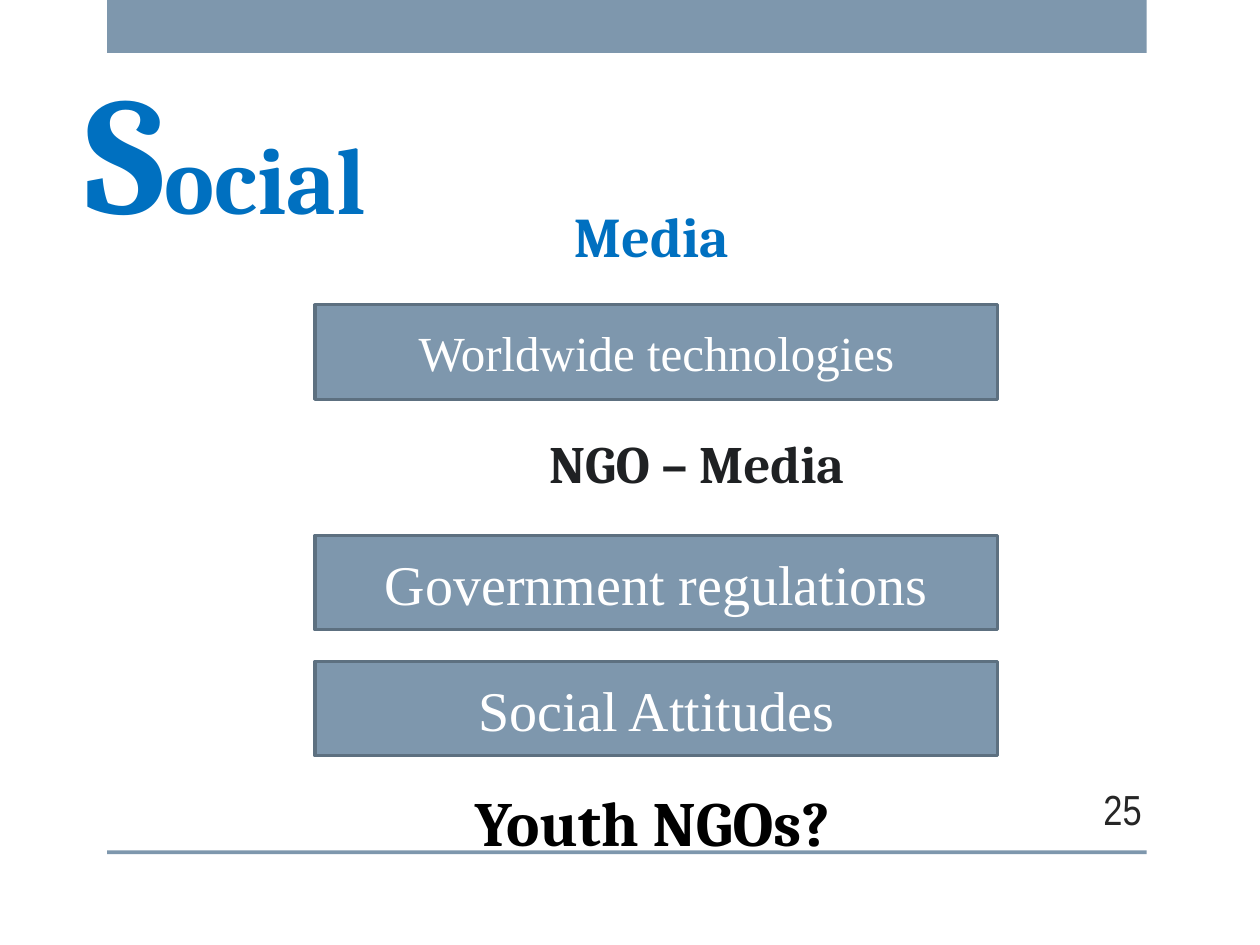
import pptx
import pptx.util
import pptx.dml.color
import pptx.enum.shapes
import pptx.enum.text

Inches = pptx.util.Inches
Align = pptx.enum.text.PP_ALIGN
Anchor = pptx.enum.text.MSO_ANCHOR

SLATE, SLATE_DARK, BLUE = "7E97AD", "5D7080", "0070C0"


def color(hex_text):
    return pptx.dml.color.RGBColor.from_string(hex_text)


def write_text(shape, text, *, size, font="Cambria", fill="000000", bold=False,
               align=Align.LEFT, anchor=Anchor.MIDDLE, first_size=None):
    """Write one line; first_size enlarges its first letter."""
    frame = shape.text_frame
    frame.word_wrap = True
    frame.vertical_anchor = anchor
    para = frame.paragraphs[0]
    para.alignment = align
    parts = [(text[:1], first_size), (text[1:], size)] if first_size else [(text, size)]
    for part, points in parts:
        span = para.add_run()
        span.text = part
        span.font.size = pptx.util.Pt(points)
        span.font.name = font
        span.font.bold = bold
        span.font.color.rgb = color(fill)


def add_label(page, box, text, **style):
    write_text(page.shapes.add_textbox(*map(Inches, box)), text, **style)


def add_bar(page, box, line=None):
    bar = page.shapes.add_shape(
        pptx.enum.shapes.MSO_SHAPE.RECTANGLE, *map(Inches, box))
    bar.shadow.inherit = False
    bar.fill.solid()
    bar.fill.fore_color.rgb = color(SLATE)
    if line:
        bar.line.color.rgb = color(line)
        bar.line.width = pptx.util.Pt(1.75)
    else:
        bar.line.fill.background()
    return bar


def add_frame(page, left, width):
    # Band at the top and rule at the bottom
    for top, height in ((0, 0.42), (6.75, 0.03)):
        add_bar(page, (left, top, width, height))


def add_headings(page):
    add_label(page, (0.58, 0.97, 5.33, 0.4), "Social", size=54, first_size=96,
              fill=BLUE, bold=True)
    add_label(page, (0.67, 1.51, 9, 0.67), "Media", size=32, fill=BLUE, bold=True,
              align=Align.CENTER, anchor=Anchor.BOTTOM)
    add_label(page, (4.03, 3.37, 3, 0.6), "NGO – Media", size=30, fill="1F2123",
              bold=True, align=Align.CENTER)
    add_label(page, (3.67, 6.17, 3.24, 0.71), "Youth NGOs?", size=36, bold=True,
              anchor=Anchor.TOP)


def add_factors(page, left, width, height):
    # Outlined bars: top, text, size
    for top, text, size in ((2.42, "Worldwide technologies", 28),
                            (4.25, "Government regulations", 32),
                            (5.25, "Social Attitudes", 32)):
        bar = add_bar(page, (left, top, width, height), line=SLATE_DARK)
        write_text(bar, text, size=size, font="Times New Roman", fill="FFFFFF",
                   align=Align.CENTER)


def main():
    deck = pptx.Presentation()
    deck.slide_width, deck.slide_height = Inches(10), Inches(7.5)
    page = deck.slides.add_slide(deck.slide_layouts[6])
    add_frame(page, 0.85, 8.25)
    add_headings(page)
    add_factors(page, 2.5, 5.42, 0.75)
    # Page number
    add_label(page, (8.33, 6.22, 0.83, 0.4), "25", size=24, font="Arial Narrow",
              fill="262626", align=Align.RIGHT)
    deck.save("out.pptx")


if __name__ == "__main__":
    main()
